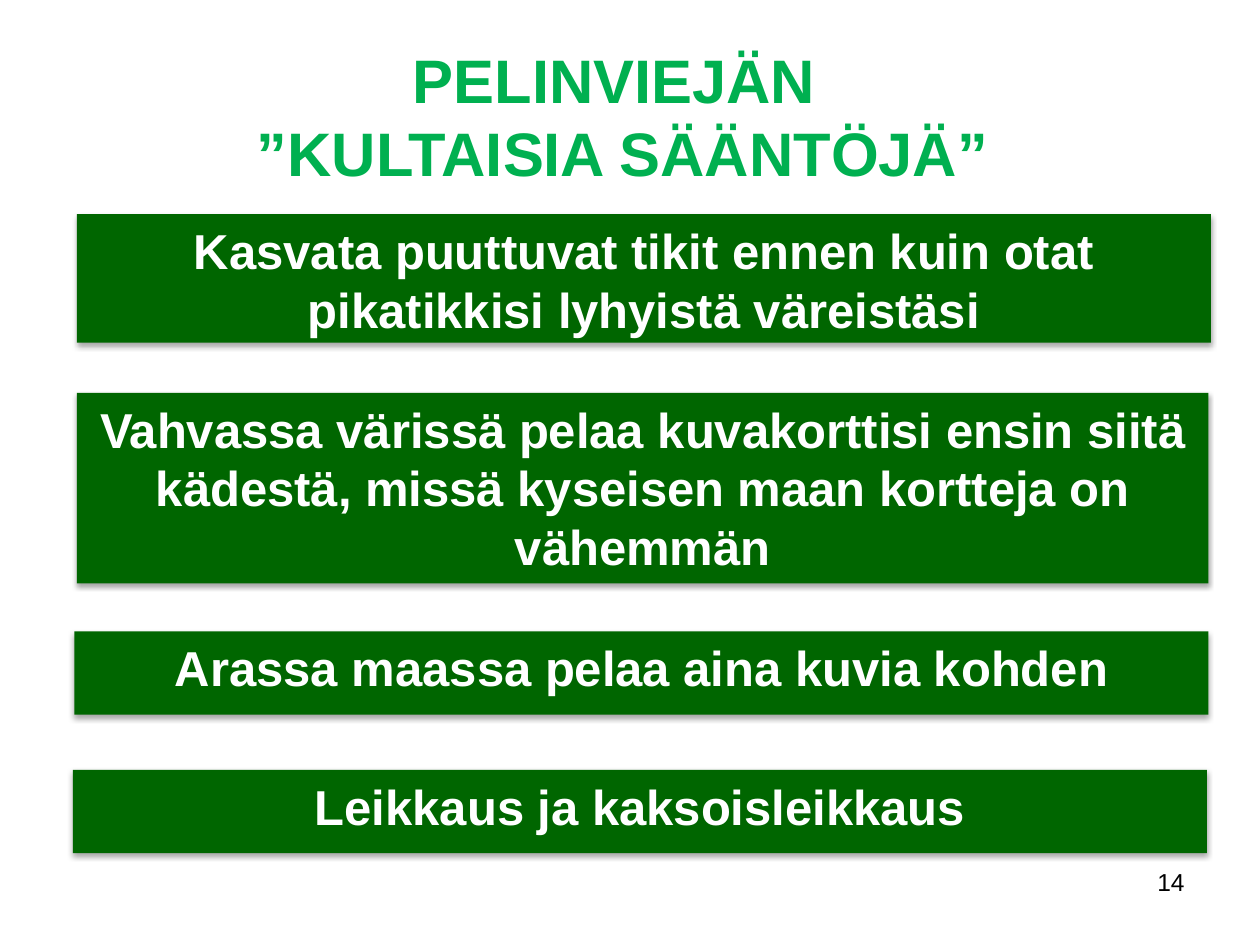
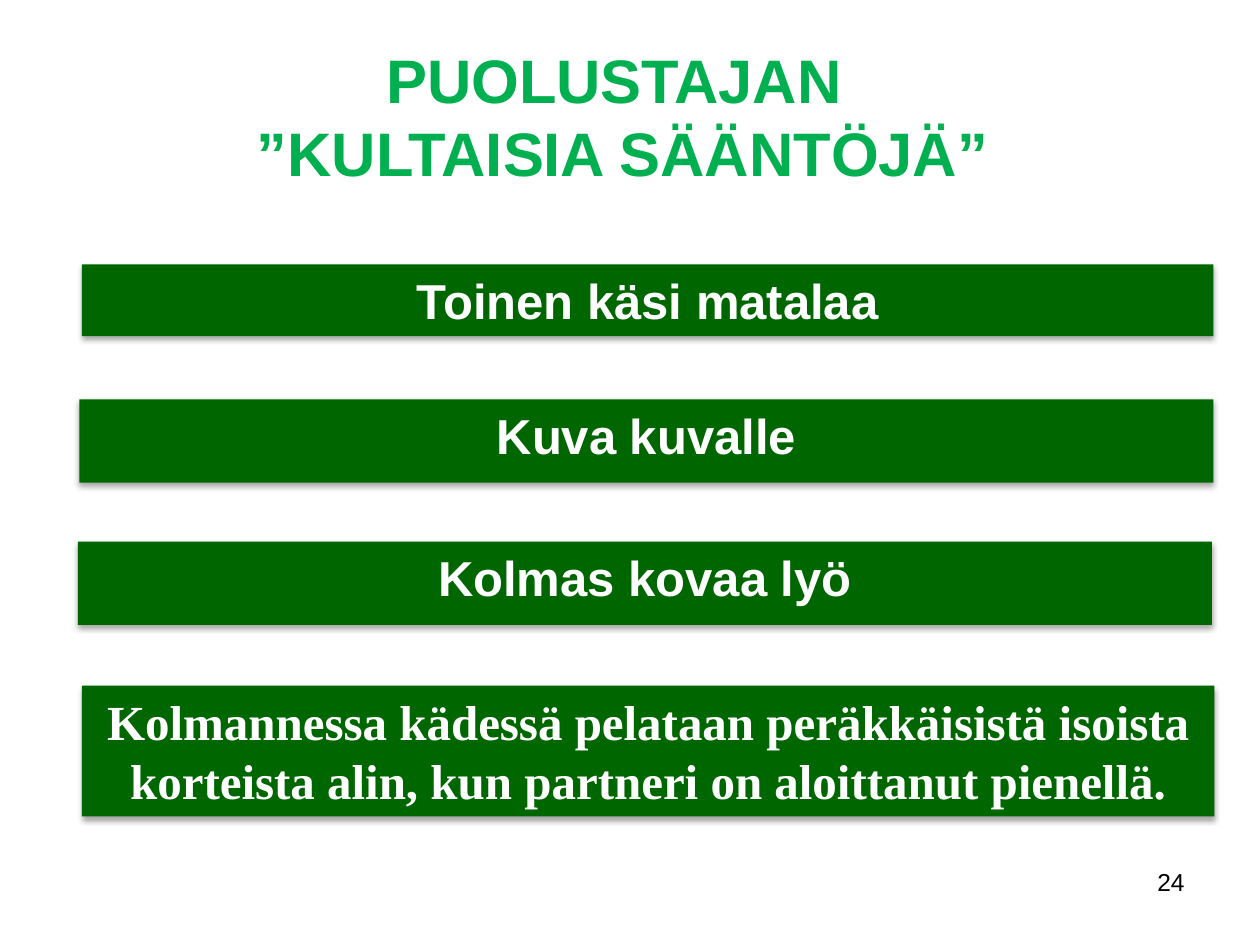
"""Builds two slides of golden rules for bridge: declarer and defender."""
import pptx
import pptx.util
import pptx.dml.color
import pptx.enum.shapes
import pptx.enum.text
import pptx.oxml
from dataclasses import dataclass

Cm, Pt = pptx.util.Cm, pptx.util.Pt
ALIGN = pptx.enum.text.PP_ALIGN
ANCHOR = pptx.enum.text.MSO_ANCHOR


@dataclass(frozen=True)
class Theme:
    title: str = "00B050"
    bar: str = "006600"
    bar_text: str = "FFFFFF"
    number: str = "000000"
    font: str = "Arial"
    serif: str = "Times New Roman"
    title_size: float = 35.1
    rule_size: float = 28
    number_size: float = 14


T = Theme()
SUBTITLE = "”KULTAISIA SÄÄNTÖJÄ”"
TITLE_BOX = (1.12, 0.74, 22.86, 3.18)
NUMBER_BOX = (18.21, 17.35, 5.92, 1.32)
BAR_W, LINE_H = 22.86, 1.68

SLIDES = [
    {"title": "PELINVIEJÄN ", "number": "14", "rules": [
        ("Kasvata puuttuvat tikit ennen kuin otat pikatikkisi lyhyistä väreistäsi",
         (1.55, 4.32, BAR_W, 2.59), T.font),
        ("Vahvassa värissä pelaa kuvakorttisi ensin siitä kädestä, "
         "missä kyseisen maan kortteja on vähemmän",
         (1.55, 7.92, 22.81, 3.84), T.font),
        ("Arassa maassa pelaa aina kuvia kohden", (1.5, 12.73, BAR_W, LINE_H), T.font),
        ("Leikkaus ja kaksoisleikkaus", (1.47, 15.52, BAR_W, LINE_H), T.font),
    ]},
    {"title": "PUOLUSTAJAN ", "number": "24", "rules": [
        ("Toinen käsi matalaa", (1.65, 5.33, 22.81, 1.45), T.font),
        ("Kuva kuvalle", (1.6, 8.05, BAR_W, LINE_H), T.font),
        ("Kolmas kovaa lyö", (1.57, 10.92, BAR_W, LINE_H), T.font),
        ("Kolmannessa kädessä pelataan peräkkäisistä isoista korteista alin, "
         "kun partneri on aloittanut pienellä.",
         (1.65, 13.82, 22.83, 2.64), T.serif),
    ]},
]

SHADOW = (
    '<a:effectLst xmlns:a="http://schemas.openxmlformats.org/drawingml/2006/main">'
    '<a:outerShdw blurRad="40000" dist="23000" dir="5400000" rotWithShape="0">'
    '<a:srgbClr val="000000"><a:alpha val="35000"/></a:srgbClr>'
    '</a:outerShdw></a:effectLst>'
)


def rgb(value):
    return pptx.dml.color.RGBColor.from_string(value)


def write(sp, lines, size, color, align, anchor=ANCHOR.TOP, bold=True, font=T.font):
    tf = sp.text_frame
    tf.word_wrap = True
    tf.vertical_anchor = anchor
    p = tf.paragraphs[0]
    p.alignment = align
    for i, line in enumerate(lines):
        if i:
            p.add_line_break()
        r = p.add_run()
        r.text = line
        r.font.name, r.font.size, r.font.bold = font, Pt(size), bold
        r.font.color.rgb = rgb(color)


def add_text(s, box, *args, **kwargs):
    write(s.shapes.add_textbox(*map(Cm, box)), *args, **kwargs)


def add_bar(s, text, box, font):
    sp = s.shapes.add_shape(pptx.enum.shapes.MSO_SHAPE.RECTANGLE, *map(Cm, box))
    sp.fill.solid()
    sp.fill.fore_color.rgb = rgb(T.bar)
    sp.line.fill.background()
    sp._element.spPr.append(pptx.oxml.parse_xml(SHADOW))
    write(sp, [text], T.rule_size, T.bar_text, ALIGN.CENTER, font=font)


def main():
    prs = pptx.Presentation()
    prs.slide_width, prs.slide_height = Cm(25.4), Cm(19.05)
    for content in SLIDES:
        s = prs.slides.add_slide(prs.slide_layouts[6])
        add_text(s, NUMBER_BOX, [content["number"]], T.number_size, T.number,
                 ALIGN.RIGHT, bold=False)
        add_text(s, TITLE_BOX, [content["title"], SUBTITLE], T.title_size, T.title,
                 ALIGN.CENTER, ANCHOR.MIDDLE)
        for rule in content["rules"]:
            add_bar(s, *rule)
    prs.save("out.pptx")


if __name__ == "__main__":
    main()
